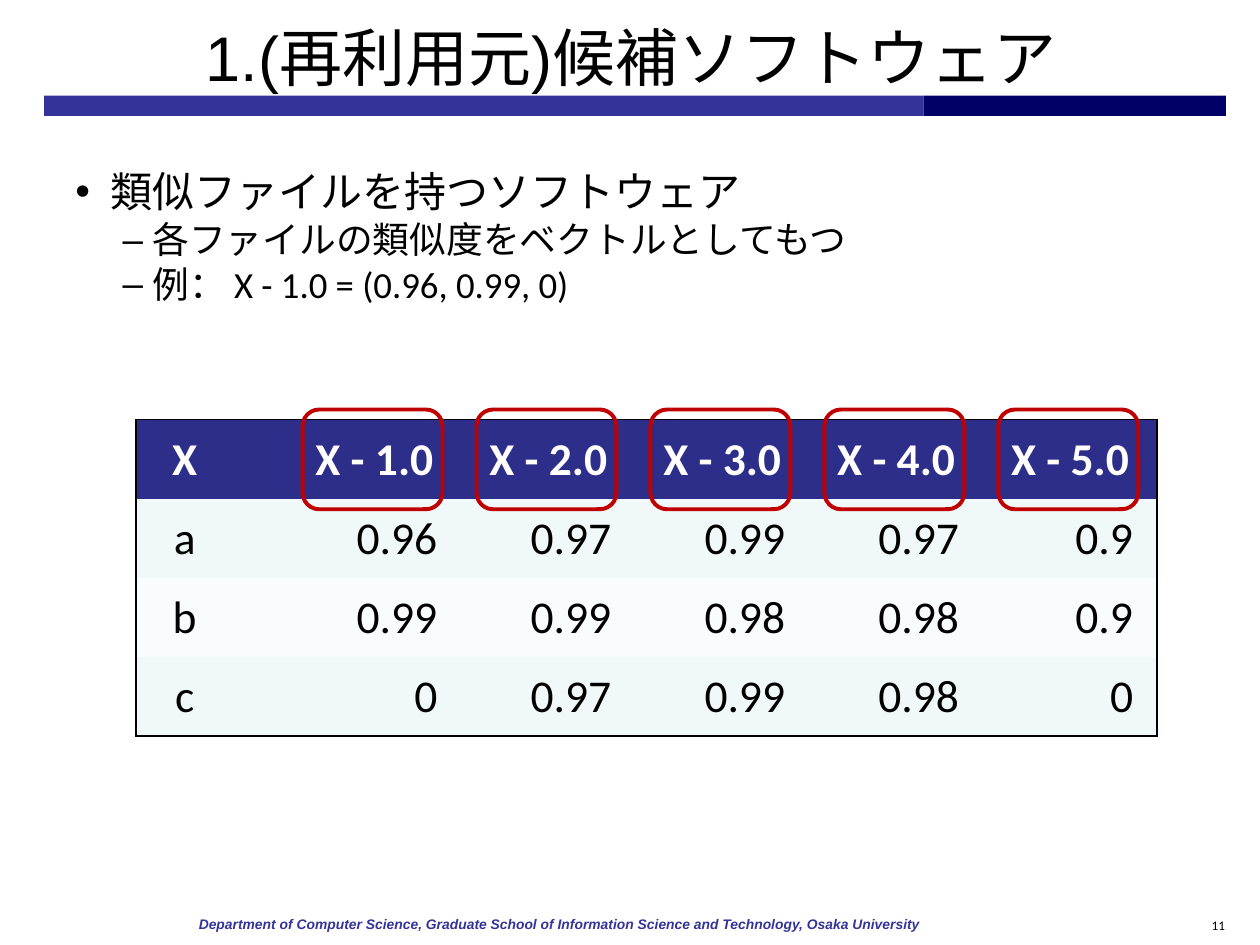
import lxml.etree
import pptx
import pptx.dml.color
import pptx.enum.shapes
import pptx.enum.text
import pptx.oxml.ns
import pptx.util

Pt = pptx.util.Pt
qn = pptx.oxml.ns.qn
ALIGN = pptx.enum.text.PP_ALIGN
SHAPE = pptx.enum.shapes.MSO_SHAPE
NO_STYLE_TABLE = "{2D5ABB26-0587-4C30-8999-92F81FD0307C}"

COLUMNS = [55.5, 31] + [99.4] * 5
TABLE_LEFT, TABLE_TOP, ROW_HEIGHT = 77.8, 239.8, 45
ROWS = [
    ["X", "", "X - 1.0", "X - 2.0", "X - 3.0", "X - 4.0", "X - 5.0"],
    ["a", "", "0.96", "0.97", "0.99", "0.97", "0.9"],
    ["b", "", "0.99", "0.99", "0.98", "0.98", "0.9"],
    ["c", "", "0", "0.97", "0.99", "0.98", "0"],
]
BULLETS = [
    # text, level, size, left margin, hanging indent, mark
    ("類似ファイルを持つソフトウェア", 0, 24, 20, 20, "•"),
    ("各ファイルの類似度をベクトルとしてもつ", 1, 21, 44, 17, "–"),
    ("例： X - 1.0 = (0.96, 0.99, 0)", 1, 21, 44, 17, "–"),
]


def rgb(value):
    return pptx.dml.color.RGBColor.from_string(value)


def write(para, text, size=18, font="Calibri", color="000000", bold=False,
          italic=False, align=ALIGN.LEFT):
    para.alignment = align
    span = para.add_run()
    span.text = text
    span.font.size = Pt(size)
    span.font.name = font
    span.font.color.rgb = rgb(color)
    span.font.bold = bold
    span.font.italic = italic


def set_bullet(para, mark, margin, hanging):
    properties = para._p.get_or_add_pPr()
    properties.set("marL", str(Pt(margin)))
    properties.set("indent", str(-Pt(hanging)))
    lxml.etree.SubElement(properties, qn("a:buFont"), typeface="Arial")
    lxml.etree.SubElement(properties, qn("a:buChar"), char=mark)


def set_borders(cell, sides, color="000000", width=1):
    """Draw the named sides (L, R, T, B); call before the cell is filled."""
    properties = cell._tc.get_or_add_tcPr()
    for side in sides:
        line = lxml.etree.SubElement(properties, qn("a:ln" + side), w=str(Pt(width)))
        fill = lxml.etree.SubElement(line, qn("a:solidFill"))
        lxml.etree.SubElement(fill, qn("a:srgbClr"), val=color)


class SlideBuilder:
    header_fill = "2D2D8A"
    row_fills = ["F1F8F9", "F8FCFC"]
    accent = "C00000"

    def __init__(self, page):
        self.page = page

    def title(self, text, left, top, width, height):
        box = self.page.shapes.title
        box.left, box.top, box.width, box.height = map(Pt, (left, top, width, height))
        frame = box.text_frame
        frame.auto_size = pptx.enum.text.MSO_AUTO_SIZE.NONE
        frame.vertical_anchor = pptx.enum.text.MSO_ANCHOR.MIDDLE
        write(frame.paragraphs[0], text, size=36, font="Arial", align=ALIGN.CENTER)

    def shape(self, kind, left, top, width, height, fill=None, line=None):
        box = self.page.shapes.add_shape(kind, Pt(left), Pt(top), Pt(width), Pt(height))
        box.shadow.inherit = False
        if fill:
            box.fill.solid()
            box.fill.fore_color.rgb = rgb(fill)
        else:
            box.fill.background()
        if line:
            box.line.color.rgb = rgb(line)
            box.line.width = Pt(2.25)
        else:
            box.line.fill.background()

    def text_frame(self, left, top, width, height):
        box = self.page.shapes.add_textbox(Pt(left), Pt(top), Pt(width), Pt(height))
        box.text_frame.word_wrap = True
        return box.text_frame

    def label(self, text, left, top, width, height, **style):
        frame = self.text_frame(left, top, width, height)
        write(frame.paragraphs[0], text, **style)

    def bullets(self, items, left, top, width, height):
        frame = self.text_frame(left, top, width, height)
        for index, (text, level, size, margin, hanging, mark) in enumerate(items):
            para = frame.add_paragraph() if index else frame.paragraphs[0]
            para.level = level
            para.line_spacing = 0.9
            para.space_before = Pt(3 if index else 0)
            set_bullet(para, mark, margin, hanging)
            write(para, text, size=size)

    def table(self, rows, columns, left, top, row_height):
        holder = self.page.shapes.add_table(
            len(rows), len(columns), Pt(left), Pt(top),
            Pt(sum(columns)), Pt(row_height * len(rows)))
        table = holder.table
        table._tbl.tblPr.find(qn("a:tableStyleId")).text = NO_STYLE_TABLE
        table.first_row = table.horz_banding = False
        for column, width in zip(table.columns, columns):
            column.width = Pt(width)
        for r, values in enumerate(rows):
            table.rows[r].height = Pt(row_height)
            for c, value in enumerate(values):
                edges = {"L": c == 0, "R": c == len(columns) - 1,
                         "T": r == 0, "B": r == len(rows) - 1}
                sides = [side for side, outer in edges.items() if outer]
                self.cell(table.cell(r, c), value, sides, header=r == 0,
                          fill=self.row_fills[(r - 1) % 2] if r else self.header_fill,
                          align=ALIGN.CENTER if r == 0 or c == 0 else ALIGN.RIGHT)

    def cell(self, cell, value, sides, header, fill, align):
        set_borders(cell, sides)
        cell.fill.solid()
        cell.fill.fore_color.rgb = rgb(fill)
        if value:
            cell.margin_left = cell.margin_right = Pt(13.7)
            cell.margin_top = cell.margin_bottom = Pt(7)
            write(cell.text_frame.paragraphs[0], value, size=26, bold=header,
                  color="FFFFFF" if header else "000000", align=align)


def main():
    deck = pptx.Presentation()
    deck.slide_width, deck.slide_height = Pt(720), Pt(540)
    builder = SlideBuilder(deck.slides.add_slide(deck.slide_layouts[5]))

    builder.shape(SHAPE.RECTANGLE, 25.2, 54.7, 502.6, 11.5, fill="333399")
    builder.shape(SHAPE.RECTANGLE, 527.8, 54.7, 172.8, 11.5, fill="000066")
    builder.title("1.(再利用元)候補ソフトウェア", 23, 9.4, 675.4, 45.4)
    builder.bullets(BULLETS, 36, 94.3, 648, 388)

    builder.table(ROWS, COLUMNS, TABLE_LEFT, TABLE_TOP, ROW_HEIGHT)
    for column in range(2, len(COLUMNS)):
        left = TABLE_LEFT + sum(COLUMNS[:column]) + 8.6
        builder.shape(SHAPE.ROUNDED_RECTANGLE, left, 234, 80, 57, line=builder.accent)

    builder.label("Department of Computer Science, Graduate School of Information "
                  "Science and Technology, Osaka University",
                  106.5, 520, 614, 17, size=7.9, font="Arial", color="333399",
                  bold=True, italic=True)
    builder.label("11", 661.7, 520.6, 45.4, 21, size=7.5, align=ALIGN.RIGHT)
    deck.save("out.pptx")


if __name__ == "__main__":
    main()
